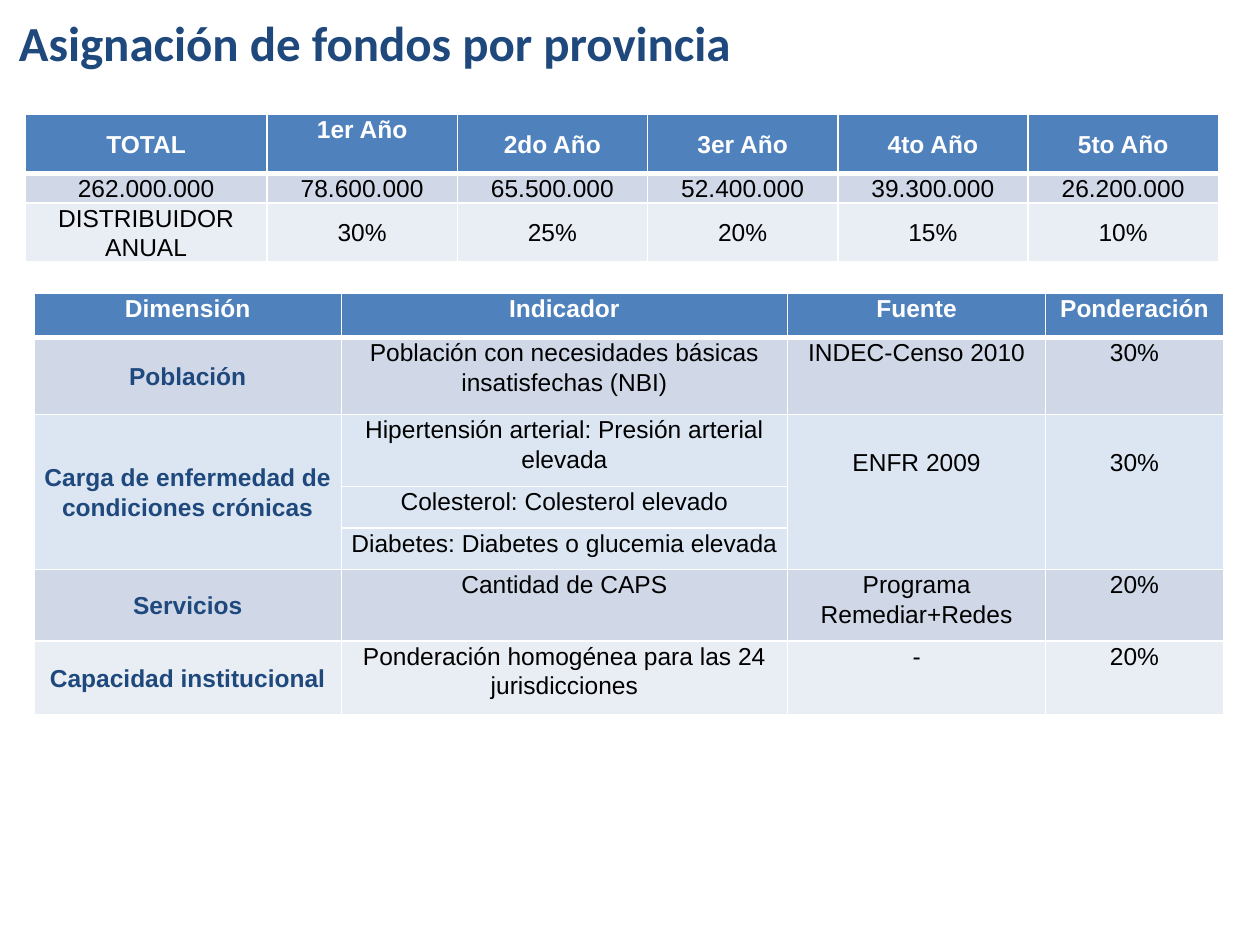
import pptx
import pptx.dml.color
import pptx.enum.text
import pptx.oxml
import pptx.oxml.ns
import pptx.util

RGBColor = pptx.dml.color.RGBColor
MSO_ANCHOR = pptx.enum.text.MSO_ANCHOR
PP_ALIGN = pptx.enum.text.PP_ALIGN

WHITE = RGBColor(0xFF, 0xFF, 0xFF)
BLACK = RGBColor(0x00, 0x00, 0x00)
NAVY = RGBColor(0x1F, 0x49, 0x7D)
HEADER_BLUE = RGBColor(0x4F, 0x81, 0xBD)
BAND_DARK = RGBColor(0xD0, 0xD8, 0xE8)
BAND_LIGHT = RGBColor(0xE9, 0xED, 0xF4)
BAND_BLUE = RGBColor(0xDC, 0xE6, 0xF2)

SLIDE_WIDTH = pptx.util.Inches(10)
SLIDE_HEIGHT = pptx.util.Inches(7.5)
GRID_COLUMNS = 100
GRID_ROWS = 75

FUND_COLUMNS = [19.2] + [15.1] * 5
FUND_HEIGHTS = [4.65, 2.35, 4.7]
FUND_FILLS = [HEADER_BLUE, BAND_DARK, BAND_LIGHT]
FUND_ROWS = [
    ["TOTAL", "1er Año", "2do Año", "3er Año", "4to Año", "5to Año"],
    ["262.000.000", "78.600.000", "65.500.000", "52.400.000", "39.300.000", "26.200.000"],
    ["DISTRIBUIDOR ANUAL", "30%", "25%", "20%", "15%", "10%"],
]

INDICATOR_COLUMNS = [24.4, 35.4, 20.5, 14.1]
INDICATOR_HEIGHTS = [3.5, 6.1, 5.7, 3.3, 3.3, 5.7, 5.8]
INDICATOR_FILLS = [HEADER_BLUE, BAND_DARK, BAND_BLUE, BAND_BLUE, BAND_BLUE, BAND_DARK, BAND_LIGHT]
INDICATOR_ROWS = [
    ["Dimensión", "Indicador", "Fuente", "Ponderación"],
    ["Población", "Población con necesidades básicas insatisfechas (NBI)", "INDEC-Censo 2010", "30%"],
    ["Carga de enfermedad de condiciones crónicas",
     "Hipertensión arterial: Presión arterial elevada", "ENFR 2009", "30%"],
    [None, "Colesterol: Colesterol elevado", None, None],
    [None, "Diabetes: Diabetes o glucemia elevada", None, None],
    ["Servicios", "Cantidad de CAPS", "Programa Remediar+Redes", "20%"],
    ["Capacidad institucional", "Ponderación homogénea para las 24 jurisdicciones", "-", "20%"],
]


def across(columns):
    return round(SLIDE_WIDTH * columns / GRID_COLUMNS)


def down(rows):
    return round(SLIDE_HEIGHT * rows / GRID_ROWS)


def add_run(paragraph, text, font_name, size, color, bold):
    run = paragraph.add_run()
    run.text = text
    run.font.name = font_name
    run.font.size = pptx.util.Pt(size)
    run.font.color.rgb = color
    run.font.bold = bold


def set_title(slide, text):
    title = slide.shapes.title
    title.left, title.top = across(0.5), down(0.5)
    title.width, title.height = across(96.7), down(4.6)
    frame = title.text_frame
    frame.word_wrap = True
    frame.auto_size = pptx.enum.text.MSO_AUTO_SIZE.NONE
    frame.vertical_anchor = MSO_ANCHOR.TOP
    paragraph = frame.paragraphs[0]
    paragraph.alignment = PP_ALIGN.LEFT
    add_run(paragraph, text, "Calibri", 28, NAVY, True)


def set_borders(cell, bottom_width):
    properties = cell._tc.get_or_add_tcPr()
    widths = {"lnL": 1, "lnR": 1, "lnT": 1, "lnB": bottom_width}
    for position, (side, width) in enumerate(widths.items()):
        border = pptx.oxml.parse_xml(
            f'<a:{side} {pptx.oxml.ns.nsdecls("a")} w="{pptx.util.Pt(width)}">'
            f'<a:solidFill><a:srgbClr val="{WHITE}"/></a:solidFill></a:{side}>'
        )
        properties.insert(position, border)


def format_cell(cell, text, fill, color, bold, is_header):
    cell.margin_left = cell.margin_right = across(0.7)
    cell.margin_top = cell.margin_bottom = 0
    cell.fill.solid()
    cell.fill.fore_color.rgb = fill
    set_borders(cell, 3 if is_header else 1)
    if text is not None:
        paragraph = cell.text_frame.paragraphs[0]
        paragraph.alignment = PP_ALIGN.CENTER
        paragraph.line_spacing = 1.07
        add_run(paragraph, text, "Arial", 14, color, bold)


def add_table(slide, left, top, columns, heights, rows, fills, label_column):
    frame = slide.shapes.add_table(
        len(rows), len(columns), across(left), down(top), across(sum(columns)), down(sum(heights))
    )
    table = frame.table
    for column, width in zip(table.columns, columns):
        column.width = across(width)
    for row, height in zip(table.rows, heights):
        row.height = down(height)
    for row_index, (texts, fill) in enumerate(zip(rows, fills)):
        for column_index, text in enumerate(texts):
            is_header = row_index == 0
            is_label = label_column and column_index == 0
            color = WHITE if is_header else NAVY if is_label else BLACK
            format_cell(table.cell(row_index, column_index), text, fill,
                        color, is_header or is_label, is_header)
    return table


def add_fund_table(slide):
    table = add_table(slide, 2, 9.1, FUND_COLUMNS, FUND_HEIGHTS, FUND_ROWS, FUND_FILLS, False)
    for cell in table.iter_cells():
        cell.vertical_anchor = MSO_ANCHOR.MIDDLE
    table.cell(0, 1).vertical_anchor = MSO_ANCHOR.TOP


def add_indicator_table(slide):
    table = add_table(slide, 2.7, 23.3, INDICATOR_COLUMNS, INDICATOR_HEIGHTS,
                      INDICATOR_ROWS, INDICATOR_FILLS, True)
    for row_index in range(1, len(INDICATOR_ROWS)):
        table.cell(row_index, 0).vertical_anchor = MSO_ANCHOR.MIDDLE
    for column_index in (0, 2, 3):
        table.cell(2, column_index).merge(table.cell(4, column_index))
    for column_index in (2, 3):
        table.cell(2, column_index).margin_top = down(2.6)


def main():
    presentation = pptx.Presentation()
    presentation.slide_width = SLIDE_WIDTH
    presentation.slide_height = SLIDE_HEIGHT
    slide = presentation.slides.add_slide(presentation.slide_layouts.get_by_name("Title Only"))
    set_title(slide, "Asignación de fondos por provincia")
    add_fund_table(slide)
    add_indicator_table(slide)
    presentation.save("out.pptx")


if __name__ == "__main__":
    main()
